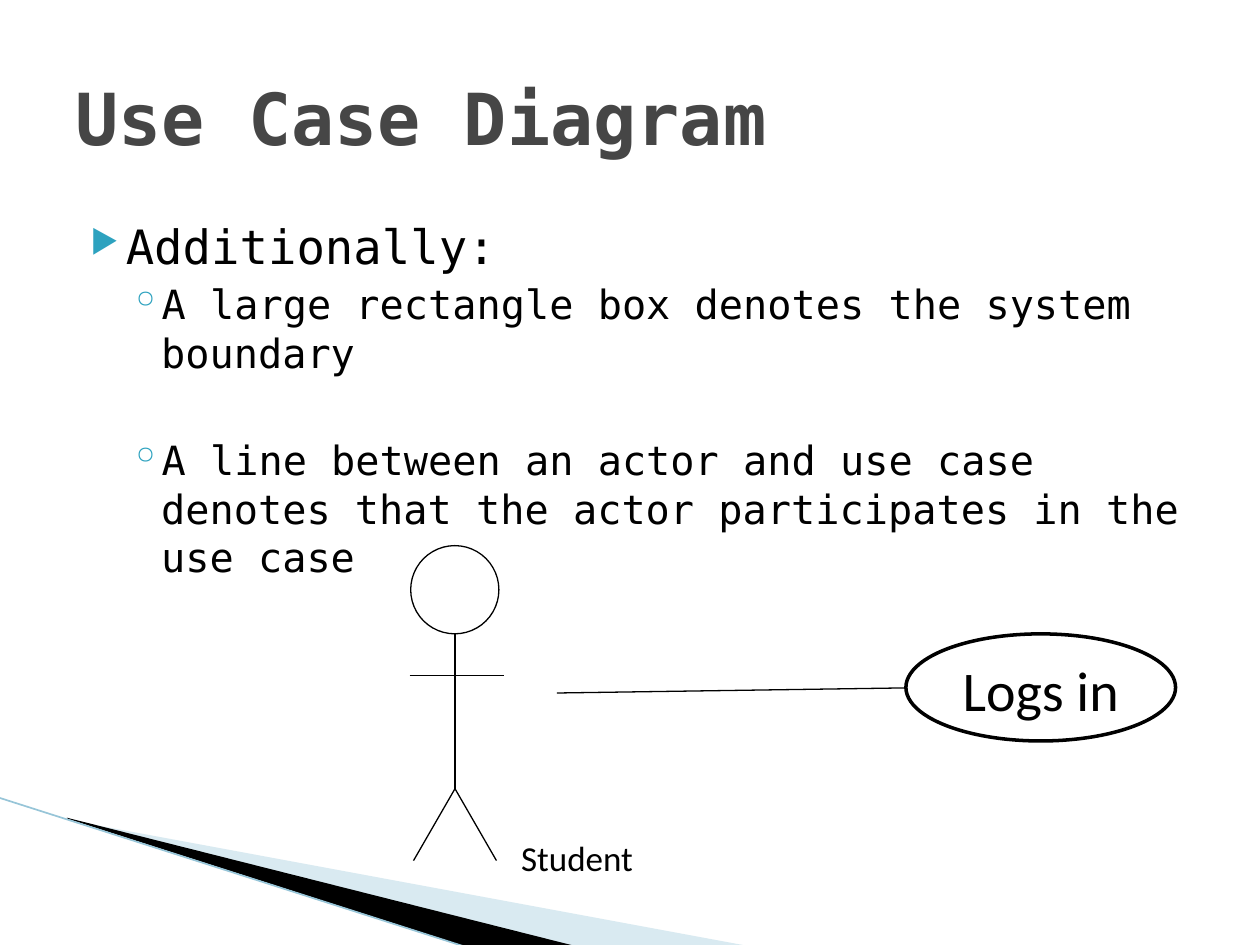
from lxml import etree
from pptx import Presentation
from pptx.dml.color import RGBColor
from pptx.enum.shapes import MSO_CONNECTOR, MSO_SHAPE
from pptx.enum.text import MSO_ANCHOR, PP_ALIGN
from pptx.oxml.ns import qn
from pptx.util import Pt

LINE = MSO_CONNECTOR.STRAIGHT
HEAD = MSO_SHAPE.FLOWCHART_CONNECTOR
LABEL = MSO_SHAPE.FLOWCHART_ALTERNATE_PROCESS
OVAL = MSO_SHAPE.OVAL
MIDDLE, TOP = MSO_ANCHOR.MIDDLE, MSO_ANCHOR.TOP
LEFT, CENTER = PP_ALIGN.LEFT, PP_ALIGN.CENTER

MONO, SANS = "DejaVu Sans Mono", "Calibri"
COLORS = {"ink": "000000", "paper": "FFFFFF", "title": "464646",
          "bullet": "2DA2BF", "pale": "A0CBDC", "edge": "97C5D8"}


def rgb(name):
    return RGBColor.from_string(COLORS[name])


def style(para, size, face, color="ink", bold=False):
    for run in para.runs:
        font = run.font
        font.size, font.name, font.bold = Pt(size), face, bold
        font.color.rgb = rgb(color)


def add_line(shapes, start, end, color="ink", width=0.75):
    line = shapes.add_connector(LINE, *map(Pt, start + end))
    line.line.color.rgb = rgb(color)
    line.line.width = Pt(width)
    etree.SubElement(line._element.spPr, qn("a:effectLst"))


def add_shape(shapes, kind, box, fill=None, width=None):
    shape = shapes.add_shape(kind, *map(Pt, box))
    shape.shadow.inherit = False
    if fill:
        shape.fill.solid()
        shape.fill.fore_color.rgb = rgb(fill)
    else:
        shape.fill.background()
    if width:
        shape.line.color.rgb = rgb("ink")
        shape.line.width = Pt(width)
    else:
        shape.line.fill.background()
    return shape


def set_label(shape, text, size, align):
    frame = shape.text_frame
    frame.word_wrap = True
    frame.vertical_anchor = TOP
    frame.text = text
    para = frame.paragraphs[0]
    para.alignment = align
    style(para, size, SANS)


def add_wedge(shapes, points, color, alpha=None):
    first, *rest = [(Pt(x), Pt(y)) for x, y in points]
    pen = shapes.build_freeform(*first)
    pen.add_line_segments(rest, close=True)
    wedge = pen.convert_to_shape()
    wedge.shadow.inherit = False
    wedge.line.fill.background()
    wedge.fill.solid()
    wedge.fill.fore_color.rgb = rgb(color)
    if alpha:
        tint = wedge._element.spPr.find(".//" + qn("a:srgbClr"))
        etree.SubElement(tint, qn("a:alpha"), val=str(alpha * 1000))


def add_text(shapes, box):
    frame = shapes.add_textbox(*map(Pt, box)).text_frame
    frame.word_wrap = True
    return frame


def set_bullet(para, char, left, hang, scale):
    props = para._p.get_or_add_pPr()
    props.set("marL", str(Pt(left)))
    props.set("indent", str(-Pt(hang)))
    tint = etree.SubElement(props, qn("a:buClr"))
    etree.SubElement(tint, qn("a:srgbClr"), val=COLORS["bullet"])
    etree.SubElement(props, qn("a:buSzPct"), val=str(scale * 1000))
    etree.SubElement(props, qn("a:buChar"), char=char)


def add_list(shapes):
    frame = add_text(shapes, (36, 120.6, 648, 352.4))
    # text, level, space before
    items = [("Additionally:", 0, 0),
             ("A large rectangle box denotes the system boundary", 1, 3.2),
             ("A line between an actor and use case denotes that "
              "the actor participates in the use case", 1, 34)]
    # bullet, left, hang, bullet scale, text size
    levels = [("▶", 28.8, 20.2, 68, 27), ("◦", 49, 18, 100, 23)]
    for i, (text, level, gap) in enumerate(items):
        para = frame.add_paragraph() if i else frame.paragraphs[0]
        para.text = text
        para.level = level
        para.space_before = Pt(gap)
        *mark, size = levels[level]
        set_bullet(para, *mark)
        style(para, size, MONO)


def add_actor(shapes):
    parts = shapes.add_group_shape().shapes
    add_shape(parts, HEAD, (234.7, 311.8, 50.4, 50.4), "paper", 0.75)
    mid, hip, foot = 260, 450.7, 491.8
    add_line(parts, (mid, 362.2), (mid, hip))
    add_line(parts, (234, 386), (288, 386))
    for side in (-23.7, 23.7):
        add_line(parts, (mid, hip), (mid + side, foot))


def main():
    deck = Presentation()
    deck.slide_width, deck.slide_height = Pt(720), Pt(540)
    shapes = deck.slides.add_slide(deck.slide_layouts[6]).shapes

    # Corner decoration
    add_wedge(shapes, [(39.6, 468.7), (428.4, 540.7), (328.3, 540.7),
                       (39.6, 468)], "pale", 40)
    add_wedge(shapes, [(38.2, 467.3), (329, 540.7), (267.8, 541.4),
                       (38.9, 468)], "ink")
    add_line(shapes, (-0.7, 455.8), (267.1, 541.4), "edge", 0.95)

    # Bullets and title
    add_list(shapes)
    title = add_text(shapes, (36, 21.6, 648, 90))
    title.vertical_anchor = MIDDLE
    title.text = "Use Case Diagram"
    style(title.paragraphs[0], 41, MONO, "title", True)

    # Actor, use case and the link between them
    add_actor(shapes)
    name = add_shape(shapes, LABEL, (289.4, 473, 138.2, 26.6))
    set_label(name, "Student", 20, LEFT)
    case = add_shape(shapes, OVAL, (517.7, 362.2, 154.1, 61.2), "paper", 2)
    set_label(case, "Logs in", 32, CENTER)
    add_line(shapes, (318.2, 396), (517.7, 393.1))

    deck.save("out.pptx")


if __name__ == "__main__":
    main()
